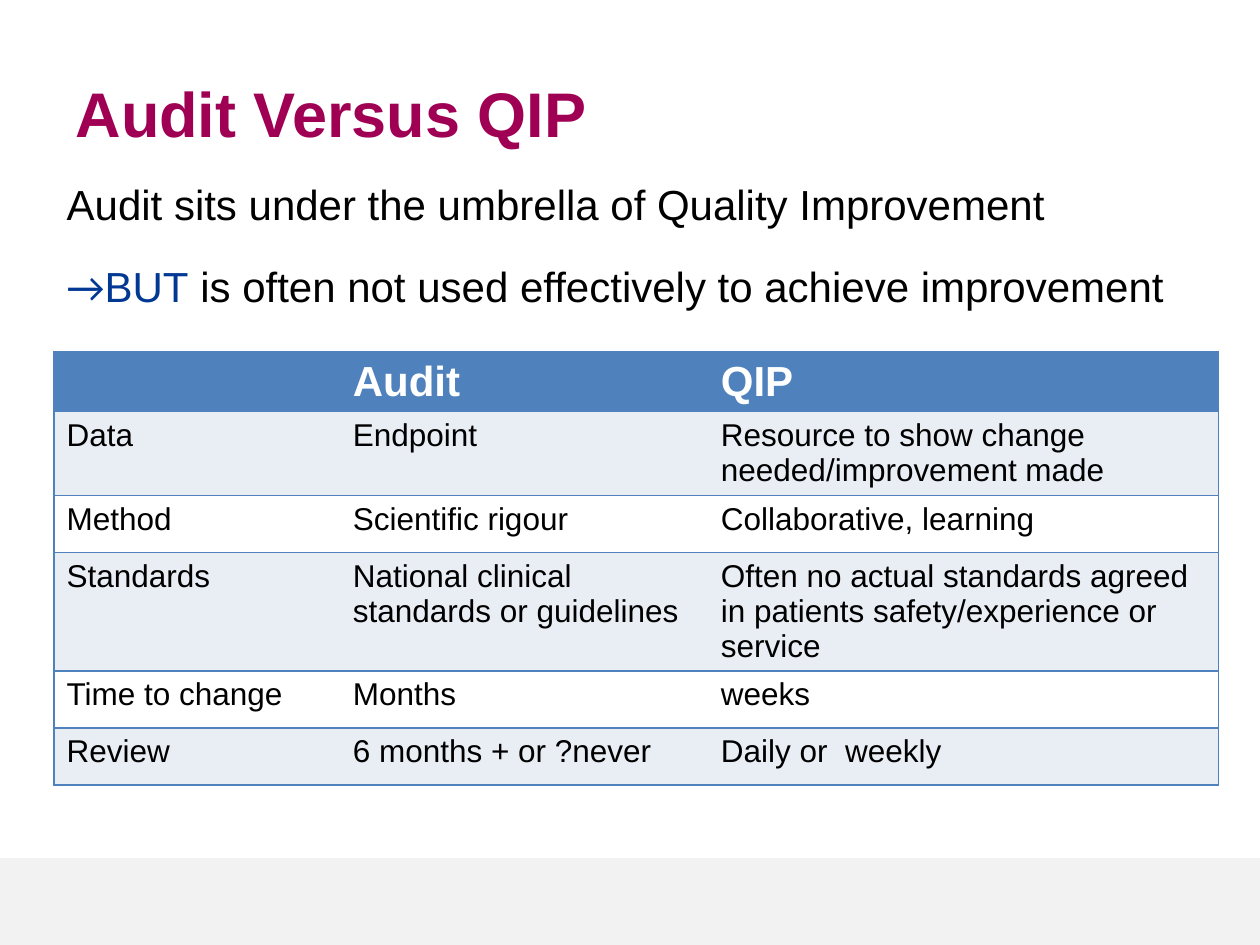
import pptx
import pptx.dml.color
import pptx.enum.shapes
import pptx.enum.text
import pptx.oxml.ns
import pptx.util
from lxml import etree
from pptx.util import Cm, Pt

BLACK, WHITE = "000000", "FFFFFF"
CRIMSON, NAVY = "A00054", "003893"
TABLE_BLUE, BAND, FOOTER_GREY = "4F81BD", "E9EDF4", "F2F2F2"


def color(hex_string):
    return pptx.dml.color.RGBColor.from_string(hex_string)


def add_xml(parent, tag, index=None, **attributes):
    element = etree.Element(pptx.oxml.ns.qn(tag), attributes)
    parent.insert(len(parent) if index is None else index, element)
    return element


class SlideBuilder:
    font_name = "Arial"

    def __init__(self, slide):
        self.slide = slide

    def run(self, paragraph, text, size, hex_string, bold=False, font_name=None):
        run = paragraph.add_run()
        run.text = text
        run.font.name = font_name or self.font_name
        run.font.size = Pt(size)
        run.font.bold = bold
        run.font.color.rgb = color(hex_string)

    def place(self, shape, left, top, width, height, anchor):
        shape.left, shape.top = Cm(left), Cm(top)
        shape.width, shape.height = Cm(width), Cm(height)
        shape.text_frame.word_wrap = True
        shape.text_frame.auto_size = pptx.enum.text.MSO_AUTO_SIZE.NONE
        shape.text_frame.vertical_anchor = anchor

    def title(self, text, *box):
        shape = self.slide.shapes.title
        self.place(shape, *box, pptx.enum.text.MSO_ANCHOR.MIDDLE)
        paragraph = shape.text_frame.paragraphs[0]
        paragraph.alignment = pptx.enum.text.PP_ALIGN.LEFT
        self.run(paragraph, text, 36, CRIMSON, bold=True)

    def body(self, lines, gap, *box):
        """Each line is a list of (text, colour, font name) runs."""
        shape = self.slide.placeholders[1]
        self.place(shape, *box, pptx.enum.text.MSO_ANCHOR.TOP)
        frame = shape.text_frame
        for index, line in enumerate(lines):
            paragraph = frame.add_paragraph() if index else frame.paragraphs[0]
            properties = paragraph._p.get_or_add_pPr()
            properties.set("marL", str(Cm(0.95)))
            properties.set("indent", str(-Cm(0.95)))
            add_xml(properties, "a:buNone")
            paragraph.space_before = Pt(gap if index else 0)
            for text, hex_string, font_name in line:
                self.run(paragraph, text, 24, hex_string, font_name=font_name)

    def bar(self, hex_string, *box):
        shape = self.slide.shapes.add_shape(
            pptx.enum.shapes.MSO_SHAPE.RECTANGLE, *map(Cm, box))
        shape.shadow.inherit = False
        shape.fill.solid()
        shape.fill.fore_color.rgb = color(hex_string)
        shape.line.fill.background()

    def borders(self, cell, sides):
        """Draw the named sides in blue and clear the others."""
        properties = cell._tc.get_or_add_tcPr()
        for index, side in enumerate("LRTB"):
            line = add_xml(properties, f"a:ln{side}", index, w=str(Pt(1)))
            if side in sides:
                fill = add_xml(line, "a:solidFill")
                add_xml(fill, "a:srgbClr", val=TABLE_BLUE)
            else:
                add_xml(line, "a:noFill")

    def table(self, rows, left, top, widths, heights):
        table = self.slide.shapes.add_table(
            len(rows), len(widths), Cm(left), Cm(top),
            Cm(sum(widths)), Cm(sum(heights))).table
        for column, width in zip(table.columns, widths):
            column.width = Cm(width)
        for row, height in zip(table.rows, heights):
            row.height = Cm(height)
        last = len(widths) - 1
        for row_index, row in enumerate(rows):
            header = row_index == 0
            fill = TABLE_BLUE if header else BAND if row_index % 2 else WHITE
            for column_index, text in enumerate(row):
                cell = table.cell(row_index, column_index)
                cell.fill.solid()
                cell.fill.fore_color.rgb = color(fill)
                self.borders(cell, "TB" + "L" * (column_index == 0)
                             + "R" * (column_index == last))
                if text:
                    self.run(cell.text_frame.paragraphs[0], text,
                             24 if header else 18,
                             WHITE if header else BLACK, bold=header)


def main():
    presentation = pptx.Presentation()
    presentation.slide_width, presentation.slide_height = Cm(25.4), Cm(19.05)
    builder = SlideBuilder(
        presentation.slides.add_slide(presentation.slide_layouts[1]))

    # Footer band
    builder.bar(FOOTER_GREY, 0, 17.3, 25.4, 1.75)

    # Title and introduction
    builder.title("Audit Versus QIP", 1.27, 1.32, 21.6, 1.88)
    builder.body([
        [("Audit sits under the umbrella of Quality Improvement", BLACK, None)],
        [("→", NAVY, "Calibri"), ("BUT", NAVY, None),
         (" is often not used effectively to achieve improvement", BLACK, None)],
    ], 18, 1.09, 3.48, 22.83, 3.6)

    # Comparison table
    builder.table([
        ["", "Audit", "QIP"],
        ["Data", "Endpoint", "Resource to show change needed/improvement made"],
        ["Method", "Scientific rigour", "Collaborative, learning"],
        ["Standards", "National clinical standards or guidelines",
         "Often no actual standards agreed in patients safety/experience or service"],
        ["Time to change", "Months", "weeks"],
        ["Review", "6 months + or ?never", "Daily or  weekly"],
    ], 1.09, 7.09, [5.77, 7.42, 10.29], [1.15, 1.7, 1.15, 1.15, 1.15, 1.15])

    presentation.save("out.pptx")


if __name__ == "__main__":
    main()
